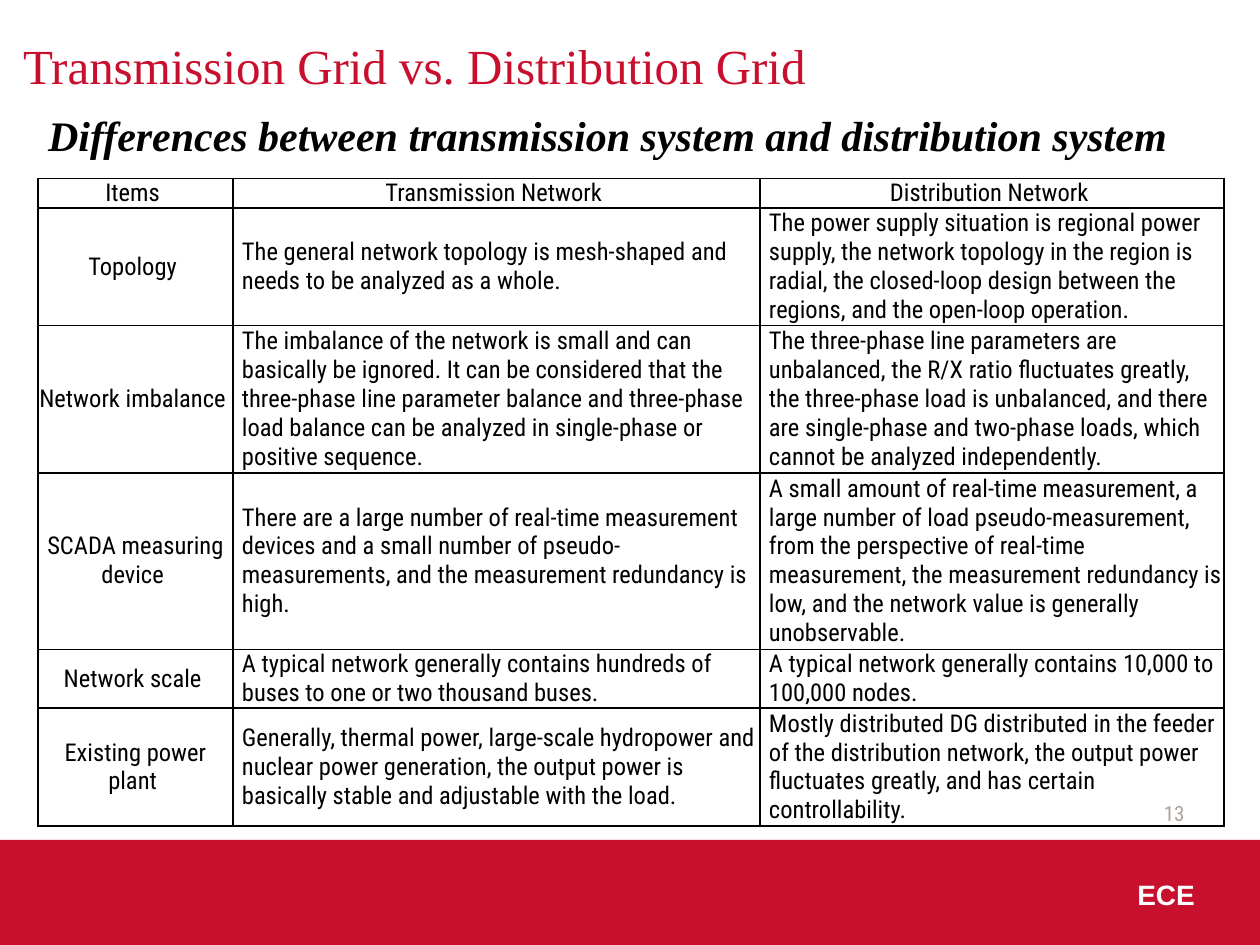
"""Builds the slide that compares transmission and distribution grids."""
import pptx
import pptx.dml.color
import pptx.enum.shapes
import pptx.enum.text
import pptx.oxml
import pptx.oxml.ns
import pptx.util

RED, BLACK, WHITE, GREY = "C8102E", "000000", "FFFFFF", "ACA39A"
SERIF, CONDENSED, SANS = "Times New Roman", "Roboto Condensed", "Arial"
ALIGN = pptx.enum.text.PP_ALIGN
ANCHOR = pptx.enum.text.MSO_ANCHOR

deck = pptx.Presentation()
deck.slide_width = pptx.util.Inches(10)
deck.slide_height = pptx.util.Inches(7.5)
unit = deck.slide_width / 120


def grid(*counts):
    return [round(count * unit) for count in counts]


def write(frame, text, size=14, face=CONDENSED, color=BLACK, bold=False,
          italic=False, align=ALIGN.LEFT, anchor=ANCHOR.MIDDLE, indent=0):
    frame.word_wrap = True
    frame.vertical_anchor = anchor
    paragraph = frame.paragraphs[0]
    paragraph.text = text
    paragraph.alignment = align
    paragraph.space_before = pptx.util.Pt(0)
    properties = paragraph._p.get_or_add_pPr()
    properties.set("marL", str(pptx.util.Inches(indent)))
    properties.set("indent", "0")
    properties.append(pptx.oxml.parse_xml(
        f"<a:buNone {pptx.oxml.ns.nsdecls('a')}/>"))
    font = paragraph.runs[0].font
    font.size, font.name = pptx.util.Pt(size), face
    font.bold, font.italic = bold, italic
    font.color.rgb = pptx.dml.color.RGBColor.from_string(color)


slide = deck.slides.add_slide(deck.slide_layouts[1])
heading, department = slide.placeholders

band = slide.shapes.add_shape(
    pptx.enum.shapes.MSO_SHAPE.RECTANGLE, *grid(0, 80, 120, 10))
band.shadow.inherit = False
band.fill.solid()
band.fill.fore_color.rgb = pptx.dml.color.RGBColor.from_string(RED)
band.line.fill.background()
slide.shapes._spTree.insert(2, band._element)

heading.left, heading.top, heading.width, heading.height = grid(1, 2, 102, 8.4)
write(heading.text_frame, "Transmission Grid vs. Distribution Grid",
      size=28, face=SERIF, color=RED)

page = slide.shapes.add_textbox(*grid(86, 75, 28, 4.8))
write(page.text_frame, "13", size=12, color=GREY, align=ALIGN.RIGHT)

(department.left, department.top,
 department.width, department.height) = grid(83, 83, 32, 5)
write(department.text_frame, "ECE", size=16, face=SANS, color=WHITE,
      bold=True, align=ALIGN.RIGHT, anchor=ANCHOR.TOP)

subtitle = slide.shapes.add_textbox(*grid(3.4, 9.8, 113, 10.9))
write(subtitle.text_frame,
      "Differences between transmission system and distribution system",
      size=24, face=SERIF, bold=True, italic=True, anchor=ANCHOR.TOP)

comparison = [
    (1, "Items ", "Transmission Network ", "Distribution Network "),
    (4, "Topology ",
     "The general network topology is mesh-shaped and needs to be analyzed "
     "as a whole.",
     "The power supply situation is regional power supply, the network "
     "topology in the region is radial, the closed-loop design between the "
     "regions, and the open-loop operation."),
    (5, "Network imbalance ",
     "The imbalance of the network is small and can basically be ignored. "
     "It can be considered that the three-phase line parameter balance and "
     "three-phase load balance can be analyzed in single-phase or positive "
     "sequence.",
     "The three-phase line parameters are unbalanced, the R/X ratio "
     "fluctuates greatly, the three-phase load is unbalanced, and there are "
     "single-phase and two-phase loads, which cannot be analyzed "
     "independently."),
    (6, "SCADA measuring device ",
     "There are a large number of real-time measurement devices and a small "
     "number of pseudo-measurements, and the measurement redundancy is high.",
     "A small amount of real-time measurement, a large number of load "
     "pseudo-measurement, from the perspective of real-time measurement, the "
     "measurement redundancy is low, and the network value is generally "
     "unobservable."),
    (2, "Network scale ",
     "A typical network generally contains hundreds of buses to one or two "
     "thousand buses.",
     "A typical network generally contains 10,000 to 100,000 nodes."),
    (4, "Existing power plant ",
     "Generally, thermal power, large-scale hydropower and nuclear power "
     "generation, the output power is basically stable and adjustable with "
     "the load.",
     "Mostly distributed DG distributed in the feeder of the distribution "
     "network, the output power fluctuates greatly, and has certain "
     "controllability."),
]
line_height = 2.8
total_lines = sum(row[0] for row in comparison)
table = slide.shapes.add_table(
    len(comparison), 3, *grid(3.6, 17, 113, total_lines * line_height)).table
table.first_row = table.horz_banding = False
for column, width in zip(table.columns, grid(18.6, 50.2, 44.2)):
    column.width = width

for r, (lines, *texts) in enumerate(comparison):
    table.rows[r].height = grid(lines * line_height)[0]
    for c, text in enumerate(texts):
        cell = table.cell(r, c)
        cell.margin_left = cell.margin_right = 0
        cell.margin_top = cell.margin_bottom = 0
        cell.vertical_anchor = ANCHOR.MIDDLE
        label = r == 0 or c == 0
        write(cell.text_frame, text, indent=0 if label else 0.07,
              align=ALIGN.CENTER if label else ALIGN.LEFT)
        for side in ("lnL", "lnR", "lnT", "lnB"):
            cell._tc.get_or_add_tcPr().append(pptx.oxml.parse_xml(
                f'<a:{side} {pptx.oxml.ns.nsdecls("a")} w="12700"><a:solidFill>'
                f'<a:srgbClr val="{BLACK}"/></a:solidFill></a:{side}>'))
        cell.fill.background()

deck.save("out.pptx")
